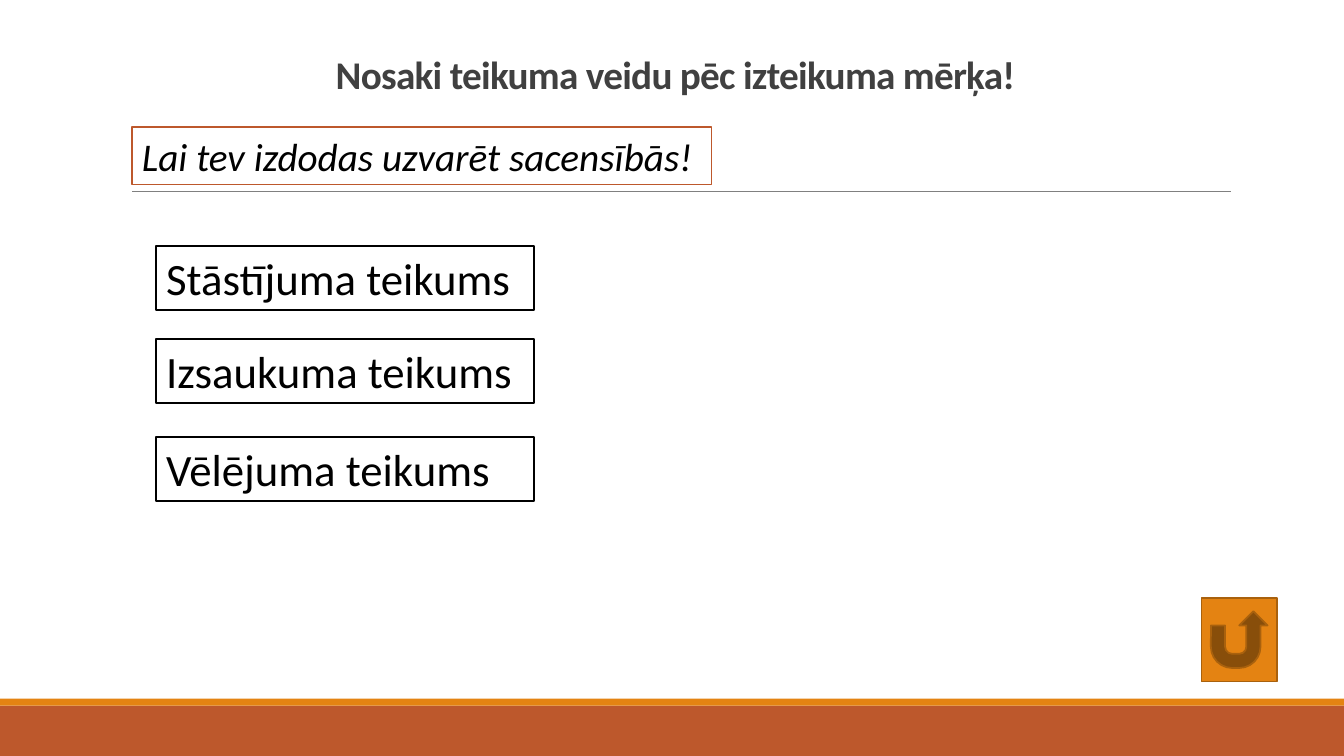
import pptx
import pptx.dml.color
import pptx.enum.shapes
import pptx.enum.text
import pptx.util
from lxml import etree
from pptx.oxml.ns import qn

Pt = pptx.util.Pt
SHAPES = pptx.enum.shapes.MSO_SHAPE
ANCHORS = pptx.enum.text.MSO_ANCHOR

COLOURS = {
    "white": "FFFFFF",
    "black": "000000",
    "title": "404040",
    "rule": "808080",
    "rust": "BD582C",
    "orange": "E48312",
    "brown": "A9610D",
}


def colour(name):
    return pptx.dml.color.RGBColor.from_string(COLOURS[name])


class SlidePainter:
    def __init__(self, slide, font="Calibri"):
        self.slide = slide
        self.font = font

    def add_span(self, para, text, size, ink, bold=False, italic=False):
        span = para.add_run()
        span.text = text
        span.font.name = self.font
        span.font.size = Pt(size)
        span.font.bold = bold
        span.font.italic = italic
        span.font.color.rgb = colour(ink)
        return span

    def title(self, text, left, top, width, height):
        box = self.slide.shapes.title
        box.left, box.top, box.width, box.height = map(Pt, (left, top, width, height))
        frame = box.text_frame
        frame.word_wrap = True
        frame.auto_size = pptx.enum.text.MSO_AUTO_SIZE.NONE
        frame.vertical_anchor = ANCHORS.BOTTOM
        para = frame.paragraphs[0]
        para.alignment = pptx.enum.text.PP_ALIGN.CENTER
        para.line_spacing = 0.85
        span = self.add_span(para, text, 28, "title", bold=True)
        span.font._element.set("spc", "-50")

    def shape(self, kind, left, top, width, height, fill, line=None):
        shape = self.slide.shapes.add_shape(kind, *map(Pt, (left, top, width, height)))
        shape.shadow.inherit = False
        shape.fill.solid()
        shape.fill.fore_color.rgb = colour(fill)
        if line:
            shape.line.color.rgb = colour(line)
            shape.line.width = Pt(1.25)
        else:
            shape.line.fill.background()
        return shape

    def text_box(self, text, left, top, width, height, size, line, italic=False):
        box = self.shape(SHAPES.RECTANGLE, left, top, width, height, "white", line)
        frame = box.text_frame
        frame.word_wrap = True
        frame.auto_size = pptx.enum.text.MSO_AUTO_SIZE.SHAPE_TO_FIT_TEXT
        frame.vertical_anchor = ANCHORS.TOP
        para = frame.paragraphs[0]
        para.alignment = pptx.enum.text.PP_ALIGN.LEFT
        self.add_span(para, text, size, "black", italic=italic)

    def rule(self, left, right, top):
        line = self.slide.shapes.add_connector(
            pptx.enum.shapes.MSO_CONNECTOR.STRAIGHT, Pt(left), Pt(top), Pt(right), Pt(top))
        line.line.color.rgb = colour("rule")
        line.line.width = Pt(0.5)
        etree.SubElement(line._element.spPr, qn("a:effectLst"))


def main():
    deck = pptx.Presentation()
    deck.slide_width, deck.slide_height = Pt(960), Pt(540)
    page = SlidePainter(deck.slides.add_slide(deck.slide_layouts[5]))

    page.shape(SHAPES.RECTANGLE, 0, 504, 960, 36, "rust")
    page.shape(SHAPES.RECTANGLE, 0, 499, 960, 5, "orange")
    page.rule(94.5, 879, 136.5)

    page.title("Nosaki teikuma veidu pēc izteikuma mērķa!", 86.4, 22.3, 792, 51)
    page.text_box("Lai tev izdodas uzvarēt sacensībās!", 94.3, 90.7, 414, 41.2,
                  28, "rust", italic=True)

    answers = {
        "Stāstījuma teikums": 175.5,
        "Izsaukuma teikums": 242,
        "Vēlējuma teikums": 312,
    }
    for answer, top in answers.items():
        page.text_box(answer, 111.6, top, 270, 46, 32, "black")

    page.shape(SHAPES.ACTION_BUTTON_RETURN, 858.2, 427, 54, 59.8, "orange", "brown")
    deck.save("out.pptx")


if __name__ == "__main__":
    main()
